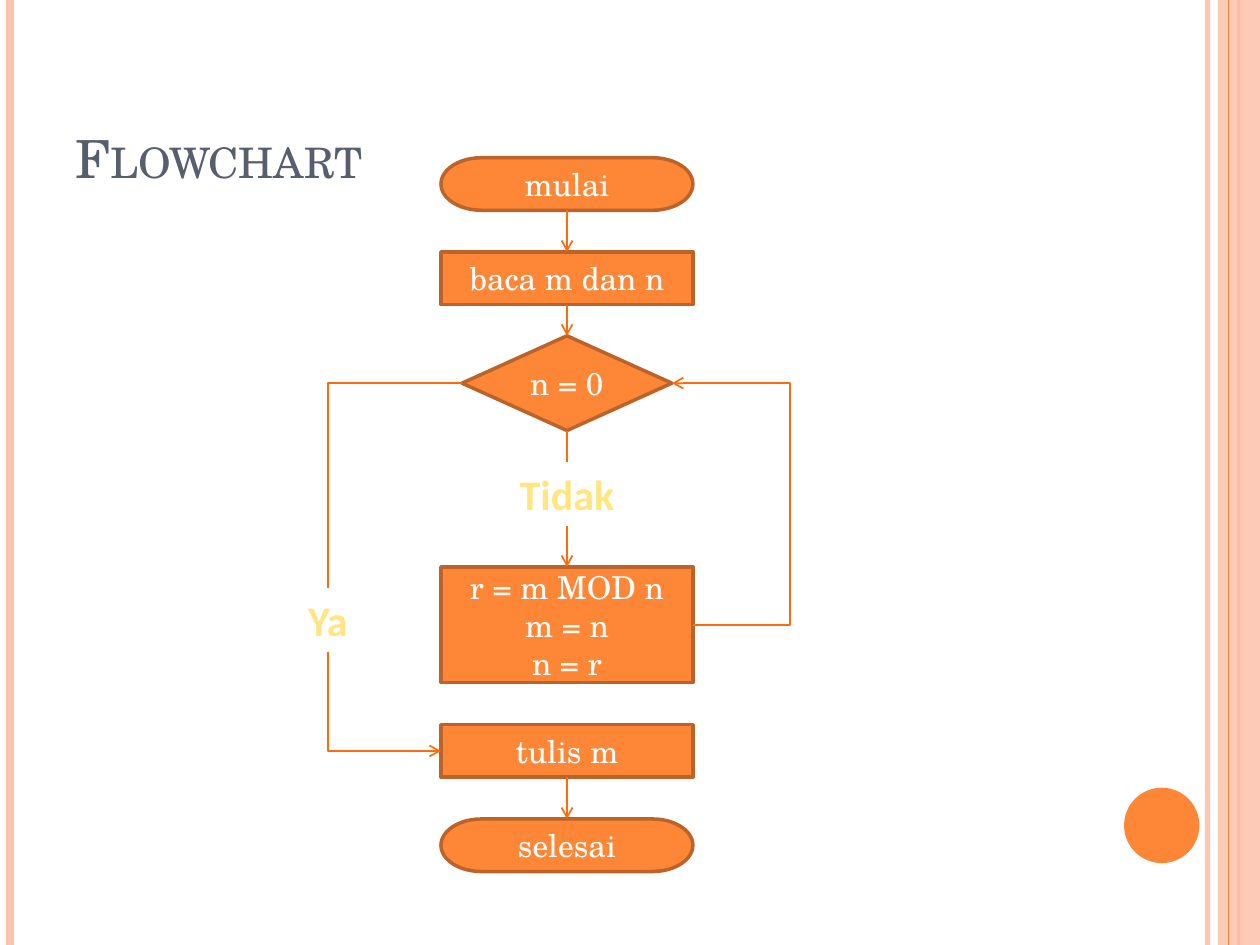
from dataclasses import dataclass
from typing import Optional

from lxml.etree import SubElement
from pptx import Presentation
from pptx.dml.color import RGBColor
from pptx.enum.shapes import MSO_CONNECTOR, MSO_SHAPE
from pptx.enum.text import MSO_ANCHOR, PP_ALIGN
from pptx.oxml.ns import qn
from pptx.util import Cm, Pt


@dataclass(frozen=True)
class Theme:
    fill: str = "FE8637"
    outline: str = "BC6329"
    arrow: str = "FF6B0A"
    band: str = "FEC3AE"
    title: str = "575F6D"
    label: str = "FFE680"
    white: str = "FFFFFF"
    font: str = "TeX Gyre Schola"
    label_font: str = "Calibri"
    title_size: float = 30
    label_size: float = 24
    body_size: float = 18


@dataclass(frozen=True)
class Node:
    text: str
    kind: MSO_SHAPE
    top: float
    width: float = 5.08
    height: float = 1.06

    @property
    def left(self) -> float:
        return CENTER - self.width / 2

    @property
    def right(self) -> float:
        return CENTER + self.width / 2

    @property
    def bottom(self) -> float:
        return self.top + self.height

    @property
    def middle(self) -> float:
        return self.top + self.height / 2


@dataclass(frozen=True)
class Label:
    text: str
    center: float
    top: float
    width: float = 3
    height: float = 1.29

    @property
    def bottom(self) -> float:
        return self.top + self.height


@dataclass(frozen=True)
class Rule:
    x: float
    color: str
    width: float
    opacity: int = 100


THEME = Theme()
SLIDE_WIDTH, SLIDE_HEIGHT = 25.4, 19.05
CENTER = 11.43
YES_X, LOOP_X = 6.61, 15.93

START = Node("mulai", MSO_SHAPE.FLOWCHART_TERMINATOR, 3.18)
READ = Node("baca m dan n", MSO_SHAPE.RECTANGLE, 5.08)
TEST = Node("n = 0", MSO_SHAPE.DIAMOND, 6.77, 4.23, 1.91)
LOOP = Node("r = m MOD n\nm = n\nn = r", MSO_SHAPE.RECTANGLE, 11.43, height=2.33)
WRITE = Node("tulis m", MSO_SHAPE.RECTANGLE, 14.61)
END = Node("selesai", MSO_SHAPE.FLOWCHART_TERMINATOR, 16.51)
NO = Label("Tidak", CENTER, 9.31)
YES = Label("Ya", YES_X, 11.85)

RULES_BELOW = (
    Rule(24.34, THEME.band, 3, 93),
    Rule(0.21, THEME.band, 4.5),
    Rule(24.97, THEME.fill, 1.5),
)
RULE_ABOVE = Rule(24.77, THEME.fill, 0.75)


def write_text(frame, text: str, *, size: float = THEME.body_size,
               color: str = THEME.white, font: str = THEME.font,
               bold: bool = False, small_caps: bool = False,
               align: PP_ALIGN = PP_ALIGN.CENTER,
               anchor: MSO_ANCHOR = MSO_ANCHOR.MIDDLE) -> None:
    frame.text = text
    frame.word_wrap = True
    frame.vertical_anchor = anchor
    for paragraph in frame.paragraphs:
        paragraph.alignment = align
        for run in paragraph.runs:
            run.font.size = Pt(size)
            run.font.name = font
            run.font.bold = bold
            run.font.color.rgb = RGBColor.from_string(color)
            if small_caps:
                run.font._element.set("cap", "small")


def set_opacity(element, percent: int) -> None:
    if percent < 100:
        color = next(element.iter(qn("a:srgbClr")))
        SubElement(color, qn("a:alpha")).set("val", str(percent * 1000))


def draw_shape(slide, kind: MSO_SHAPE, left: float, top: float, width: float,
               height: float, color: str, outline: Optional[str] = None):
    shape = slide.shapes.add_shape(kind, Cm(left), Cm(top), Cm(width), Cm(height))
    shape.shadow.inherit = False
    shape.fill.solid()
    shape.fill.fore_color.rgb = RGBColor.from_string(color)
    if outline:
        shape.line.color.rgb = RGBColor.from_string(outline)
        shape.line.width = Pt(2)
    else:
        shape.line.fill.background()
    return shape


def draw_line(slide, begin: tuple[float, float], end: tuple[float, float], *,
              color: str = THEME.arrow, width: float = 1, arrow: bool = False,
              opacity: int = 100, kind: MSO_CONNECTOR = MSO_CONNECTOR.STRAIGHT):
    connector = slide.shapes.add_connector(kind, *map(Cm, begin + end))
    connector.line.color.rgb = RGBColor.from_string(color)
    connector.line.width = Pt(width)
    properties = connector._element.spPr
    set_opacity(properties, opacity)
    if arrow:
        SubElement(properties.find(qn("a:ln")), qn("a:tailEnd")).set("type", "arrow")
    SubElement(properties, qn("a:effectLst"))
    return connector


def draw_corner(slide, begin: tuple[float, float], end: tuple[float, float], *,
                vertical_first: bool = False, arrow: bool = False) -> None:
    if vertical_first:
        center_x, center_y = (begin[0] + end[0]) / 2, (begin[1] + end[1]) / 2
        half_x, half_y = (end[0] - begin[0]) / 2, (end[1] - begin[1]) / 2
        begin = (center_x + half_y, center_y - half_x)
        end = (center_x - half_y, center_y + half_x)
    connector = draw_line(slide, begin, end, arrow=arrow, kind=MSO_CONNECTOR.ELBOW)
    properties = connector._element.spPr
    properties.find(qn("a:prstGeom")).set("prst", "bentConnector2")
    if vertical_first:
        properties.find(qn("a:xfrm")).set("rot", str(270 * 60000))


def draw_detour(slide, begin: tuple[float, float], end: tuple[float, float],
                via_x: float) -> None:
    connector = draw_line(slide, begin, end, arrow=True, kind=MSO_CONNECTOR.ELBOW)
    ratio = (via_x - begin[0]) / (end[0] - begin[0])
    geometry = connector._element.spPr.find(qn("a:prstGeom"))
    adjustments = geometry.find(qn("a:avLst"))
    guide = SubElement(adjustments, qn("a:gd"))
    guide.set("name", "adj1")
    guide.set("fmla", f"val {round(ratio * 100000)}")


def draw_rule(slide, rule: Rule) -> None:
    draw_line(slide, (rule.x, 0), (rule.x, SLIDE_HEIGHT), color=rule.color,
              width=rule.width, opacity=rule.opacity)


def draw_decoration(slide) -> None:
    for rule in RULES_BELOW:
        draw_rule(slide, rule)
    band = draw_shape(slide, MSO_SHAPE.RECTANGLE, 24.55, 0, 0.85, SLIDE_HEIGHT, THEME.band)
    set_opacity(band._element.spPr, 87)
    draw_rule(slide, RULE_ABOVE)
    draw_shape(slide, MSO_SHAPE.OVAL, 22.66, 15.88, 1.52, 1.52, THEME.fill)


def draw_node(slide, node: Node) -> None:
    shape = draw_shape(slide, node.kind, node.left, node.top, node.width,
                       node.height, THEME.fill, THEME.outline)
    write_text(shape.text_frame, node.text)


def draw_label(slide, label: Label) -> None:
    box = slide.shapes.add_textbox(Cm(label.center - label.width / 2), Cm(label.top),
                                   Cm(label.width), Cm(label.height))
    write_text(box.text_frame, label.text, size=THEME.label_size,
               color=THEME.label, font=THEME.label_font, bold=True)


def main() -> None:
    presentation = Presentation()
    presentation.slide_width, presentation.slide_height = Cm(SLIDE_WIDTH), Cm(SLIDE_HEIGHT)
    slide = presentation.slides.add_slide(presentation.slide_layouts[5])
    draw_decoration(slide)
    title = slide.shapes.title
    title.left, title.top, title.width, title.height = map(Cm, (1.27, 0.76, 20.75, 3.18))
    write_text(title.text_frame, "Flowchart", size=THEME.title_size, color=THEME.title,
               small_caps=True, align=PP_ALIGN.LEFT, anchor=MSO_ANCHOR.BOTTOM)
    for node in (START, READ, TEST, LOOP, WRITE, END):
        draw_node(slide, node)
    for upper, lower in ((START, READ), (READ, TEST), (NO, LOOP), (WRITE, END)):
        draw_line(slide, (CENTER, upper.bottom), (CENTER, lower.top), arrow=True)
    draw_corner(slide, (YES_X, YES.bottom), (WRITE.left, WRITE.middle),
                vertical_first=True, arrow=True)
    draw_detour(slide, (LOOP.right, LOOP.middle), (TEST.right, TEST.middle), LOOP_X)
    draw_corner(slide, (TEST.left, TEST.middle), (YES_X, YES.top))
    draw_line(slide, (CENTER, TEST.bottom), (CENTER, NO.top))
    for label in (NO, YES):
        draw_label(slide, label)
    presentation.save("out.pptx")


if __name__ == "__main__":
    main()
